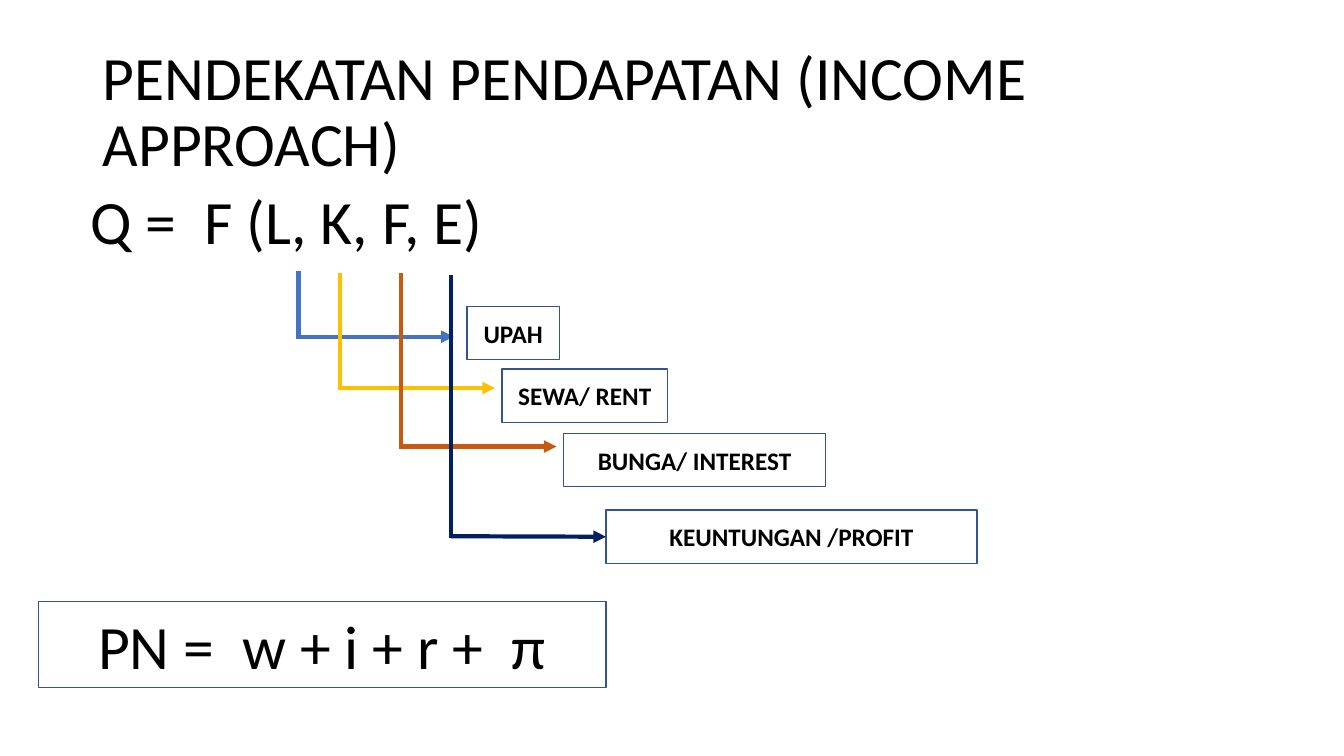
from lxml.etree import SubElement
from pptx import Presentation
from pptx.dml.color import RGBColor
from pptx.enum.shapes import MSO_CONNECTOR as CONNECTOR, MSO_SHAPE as SHAPE
from pptx.enum.text import MSO_ANCHOR as ANCHOR, PP_ALIGN as ALIGN
from pptx.oxml.ns import qn
from pptx.util import Inches, Pt


def color(value):
    return RGBColor.from_string(value)


def write(shape, text, size, anchor, align, bold=False):
    frame = shape.text_frame
    frame.word_wrap = True
    frame.vertical_anchor = anchor
    frame.text = text
    paragraph = frame.paragraphs[0]
    paragraph.alignment = align
    font = paragraph.runs[0].font
    font.name = "Calibri"
    font.size = Pt(size)
    font.bold = bold
    font.color.rgb = color("000000")
    return paragraph


presentation = Presentation()
presentation.slide_width = Inches(13.33)
presentation.slide_height = Inches(7.5)
slide = presentation.slides.add_slide(presentation.slide_layouts[6])

headings = [
    ("Q =  F (L, K, F, E)", 0.8, 1.85, 4.76, ANCHOR.TOP, 10),
    ("PENDEKATAN PENDAPATAN (INCOME APPROACH)", 0.92, 0.4, 1.45, ANCHOR.MIDDLE, 0),
]
for text, left, top, height, anchor, space_before in headings:
    box = slide.shapes.add_textbox(Inches(left), Inches(top), Inches(11.5), Inches(height))
    paragraph = write(box, text, 44, anchor, ALIGN.LEFT)
    paragraph.line_spacing = 0.9
    paragraph.space_before = Pt(space_before)

boxes = [
    ("UPAH", 4.63, 3.04, 0.92, 0.53, 18, True),
    ("SEWA/ RENT", 4.98, 3.66, 1.64, 0.53, 18, True),
    ("BUNGA/ INTEREST", 5.59, 4.3, 2.6, 0.53, 18, True),
    ("KEUNTUNGAN /PROFIT", 6.01, 5.06, 3.68, 0.53, 18, True),
    ("PN =  w + i + r +  π", 0.38, 5.97, 5.63, 0.85, 44, False),
]
rectangles = {}
for text, left, top, width, height, size, bold in boxes:
    rectangle = slide.shapes.add_shape(
        SHAPE.RECTANGLE, Inches(left), Inches(top), Inches(width), Inches(height))
    rectangle.shadow.inherit = False
    rectangle.fill.background()
    rectangle.line.color.rgb = color("325491")
    rectangle.line.width = Pt(1)
    write(rectangle, text, size, ANCHOR.MIDDLE, ALIGN.CENTER, bold)
    rectangles[text] = rectangle

arrow_length = 1.54
overlap = 0.02
arrows = [
    ("4472C4", 2.96, 2.69, 3.34, None),
    ("FFC000", 3.37, 2.71, 3.85, None),
    ("C55A11", 3.98, 2.71, 4.43, None),
    ("002060", 4.47, 2.73, 5.32, "KEUNTUNGAN /PROFIT"),
]
for line_color, left, top, bottom, target in arrows:
    group = slide.shapes.add_group_shape()
    segments = [
        (left, top, left, bottom + overlap),
        (left, bottom, left + arrow_length, bottom),
    ]
    for segment in segments:
        connector = group.shapes.add_connector(
            CONNECTOR.STRAIGHT, *[Inches(value) for value in segment])
        connector.line.color.rgb = color(line_color)
        connector.line.width = Pt(3)
        properties = connector.element.spPr
        SubElement(properties, qn("a:effectLst"))
    SubElement(properties.find(qn("a:ln")), qn("a:tailEnd"), type="triangle")
    if target:
        connector.end_connect(rectangles[target], 1)

presentation.save("out.pptx")
